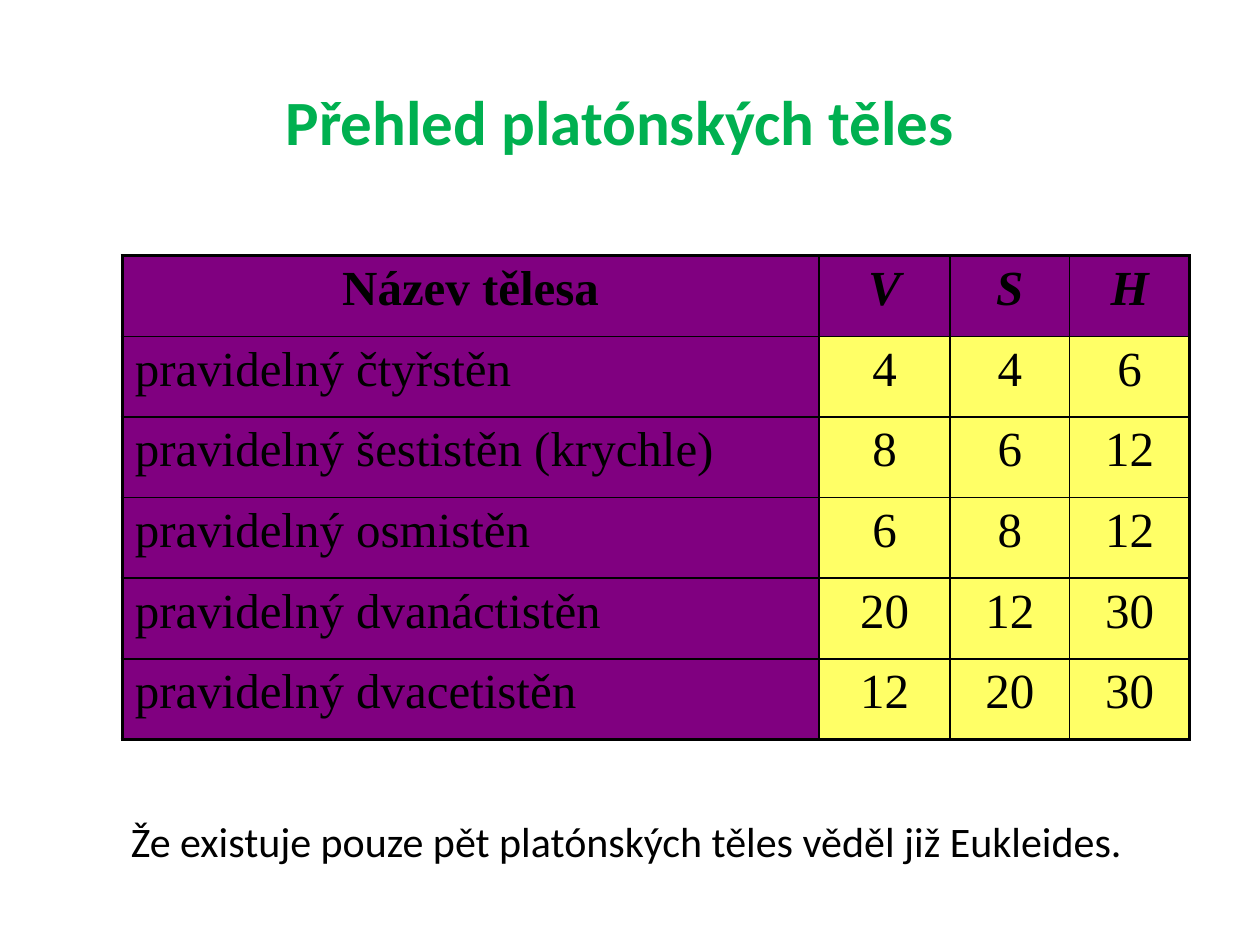
from lxml import etree
from pptx import Presentation, util as u
from pptx.dml.color import RGBColor
from pptx.enum import text
from pptx.oxml.ns import qn

# Content
HEADING = "Přehled platónských těles"
NOTE = "Že existuje pouze pět platónských těles věděl již Eukleides."
SOLIDS = [
    ("Název tělesa", "V", "S", "H"),
    ("pravidelný čtyřstěn", 4, 4, 6),
    ("pravidelný šestistěn (krychle)", 8, 6, 12),
    ("pravidelný osmistěn", 6, 8, 12),
    ("pravidelný dvanáctistěn", 20, 12, 30),
    ("pravidelný dvacetistěn", 12, 20, 30),
]

# Look and layout, in inches and points
BLACK = RGBColor(0x00, 0x00, 0x00)
GREEN = RGBColor(0x00, 0xB0, 0x50)
PURPLE = RGBColor(0x80, 0x00, 0x80)
YELLOW = RGBColor(0xFF, 0xFF, 0x66)
HEADING_BOX = (0.67, 0.58, 8.5, 0.75)
NOTE_BOX = (0.94, 6.42, 8.49, 0.56)
TABLE_LEFT, TABLE_TOP = 0.97, 2.03
COLUMNS = (5.53, 1.04, 0.95, 0.95)
ROW_HEIGHT = 0.64
OUTER_LINE, INNER_LINE = 2.25, 1


def inches(*lengths):
    return [u.Inches(length) for length in lengths]


def add_run(paragraph, words, size, font, color, align, bold=False, italic=False):
    paragraph.alignment = align
    run = paragraph.add_run()
    run.text = str(words)
    run.font.size, run.font.name = u.Pt(size), font
    run.font.bold, run.font.italic = bold, italic
    run.font.color.rgb = color


def add_border(cell, side, width):
    properties = cell._tc.get_or_add_tcPr()
    line = etree.SubElement(properties, qn(f"a:ln{side}"), w=str(u.Pt(width)))
    fill = etree.SubElement(line, qn("a:solidFill"))
    etree.SubElement(fill, qn("a:srgbClr"), val=str(BLACK))


prs = Presentation()
prs.slide_width, prs.slide_height = inches(10, 7.5)
slide = prs.slides.add_slide(prs.slide_layouts[5])
ALIGN = text.PP_ALIGN

# Heading
heading = slide.shapes.title
heading.left, heading.top, heading.width, heading.height = inches(*HEADING_BOX)
heading.text_frame.vertical_anchor = text.MSO_ANCHOR.MIDDLE
add_run(heading.text_frame.paragraphs[0], HEADING, 36, "Calibri", GREEN,
        ALIGN.CENTER, bold=True)

# Table of solids
n_rows, n_cols = len(SOLIDS), len(COLUMNS)
solids = slide.shapes.add_table(
    n_rows, n_cols,
    *inches(TABLE_LEFT, TABLE_TOP, sum(COLUMNS), n_rows * ROW_HEIGHT)).table
for column, width in zip(solids.columns, COLUMNS):
    column.width = u.Inches(width)

for r, solid in enumerate(SOLIDS):
    solids.rows[r].height = u.Inches(ROW_HEIGHT)
    for c, value in enumerate(solid):
        cell = solids.cell(r, c)
        is_header, is_name = r == 0, c == 0
        on_edge = {"L": is_name, "R": c == n_cols - 1,
                   "T": is_header, "B": r == n_rows - 1}
        for side, outer in on_edge.items():
            add_border(cell, side, OUTER_LINE if outer else INNER_LINE)
        cell.fill.solid()
        cell.fill.fore_color.rgb = PURPLE if is_header or is_name else YELLOW
        add_run(cell.text_frame.paragraphs[0], value, 28, "Times New Roman", BLACK,
                ALIGN.JUSTIFY if is_name and not is_header else ALIGN.CENTER,
                bold=is_header, italic=is_header and not is_name)

# Closing note
note = slide.shapes.add_textbox(*inches(*NOTE_BOX)).text_frame
note.word_wrap = True
add_run(note.paragraphs[0], NOTE, 24, "Calibri", BLACK, ALIGN.LEFT)

prs.save("out.pptx")
